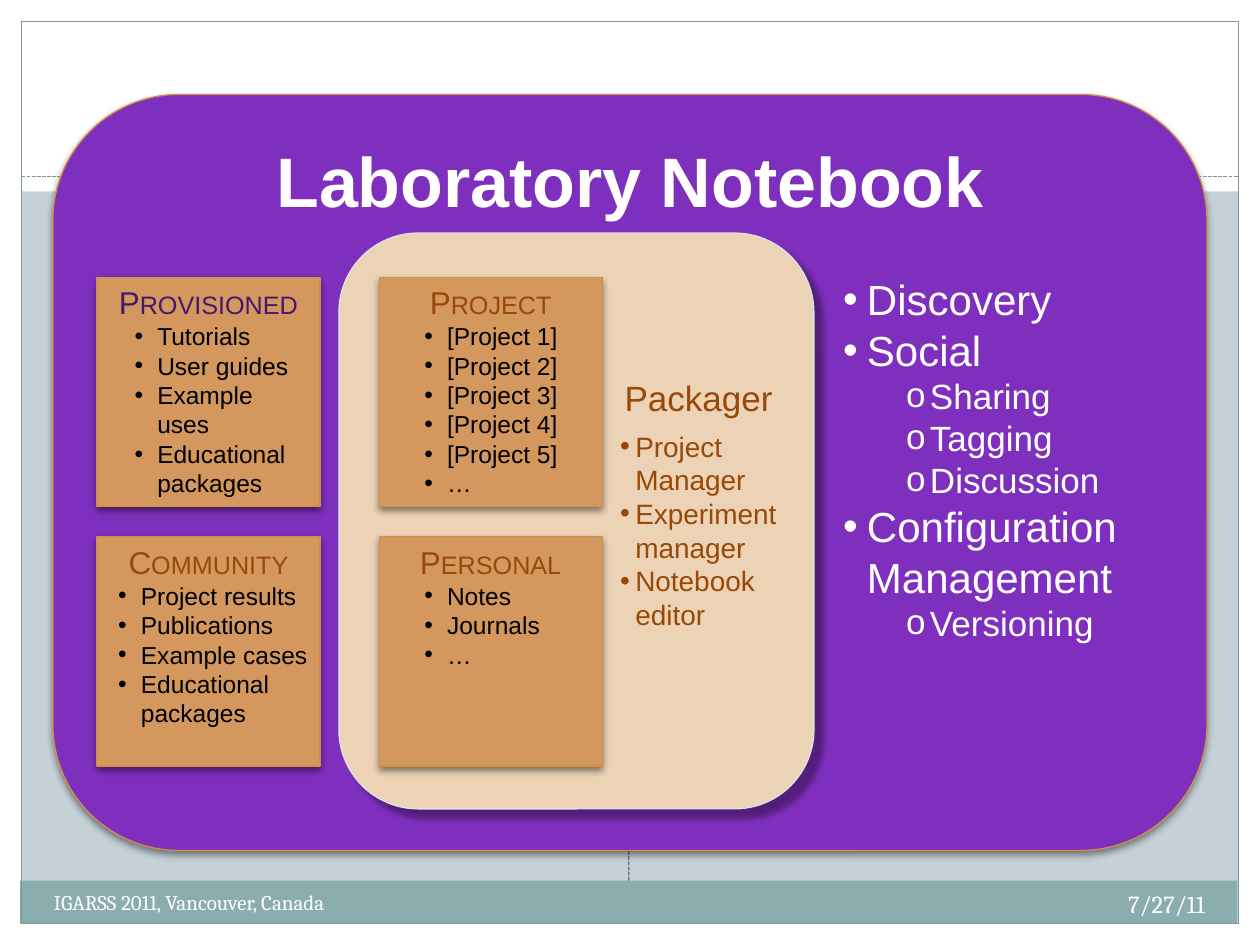
from dataclasses import dataclass

from lxml.etree import SubElement
from pptx import Presentation
from pptx.dml.color import RGBColor
from pptx.enum.dml import MSO_LINE
from pptx.enum.shapes import MSO_CONNECTOR, MSO_SHAPE
from pptx.enum.text import MSO_ANCHOR as Anchor, PP_ALIGN as Align
from pptx.oxml.ns import qn
from pptx.util import Pt

PX = 9144  # EMU per px, 100 px to the inch


@dataclass(frozen=True)
class Theme:
    sans: str = "Arial"
    serif: str = "Cambria"
    white: str = "FFFFFF"
    black: str = "000000"
    backdrop: str = "C5D1D7"
    footer: str = "8CADAE"
    frame: str = "7C999A"
    divider: str = "646B86"
    notebook: str = "7F2FBD"
    packager: str = "EDD3B6"
    packager_edge: str = "DFE1E7"
    card: str = "D4985F"
    edge: str = "D19049"
    brown: str = "984807"
    violet: str = "47186B"
    title: int = 40
    feature: int = 24
    subfeature: int = 20
    heading: int = 18
    tool: int = 16
    item: int = 14
    note: int = 12
    hairline: float = 0.75


@dataclass(frozen=True)
class Box:
    left: int
    top: int
    width: int
    height: int


@dataclass(frozen=True)
class Shadow:
    alpha: int
    blur: float
    distance: float
    angle: int


@dataclass(frozen=True)
class Line:
    text: str
    size: int
    color: str
    font: str = "Arial"
    align: Align = Align.LEFT
    bold: bool = False
    small_caps: bool = False
    indent: int = 0
    hang: int = 0
    bullet: str = ""
    after: int = 0


@dataclass(frozen=True)
class Card:
    column: int
    row: int
    heading: str
    color: str
    indent: int
    items: tuple[str, ...]


T = Theme()
CARD_SHADOW = Shadow(45, 4, 2, 90)
CARDS = (
    Card(0, 0, "Provisioned", T.violet, 38,
         ("Tutorials", "User guides", "Example uses", "Educational packages")),
    Card(0, 1, "Community", T.brown, 25,
         ("Project results", "Publications", "Example cases", "Educational packages")),
    Card(1, 0, "Project", T.brown, 44,
         (*(f"[Project {n}]" for n in range(1, 6)), "…")),
    Card(1, 1, "Personal", T.brown, 44, ("Notes", "Journals", "…")),
)
FEATURES = (
    ("Discovery", ()),
    ("Social", ("Sharing", "Tagging", "Discussion")),
    ("Configuration Management", ("Versioning",)),
)
TOOLS = ("Project Manager", "Experiment manager", "Notebook editor")


def rgb(color: str) -> RGBColor:
    return RGBColor.from_string(color)


def add_shadow(shape, shadow: Shadow) -> None:
    effects = shape.element.spPr.find(qn("a:effectLst"))
    outer = SubElement(effects, qn("a:outerShdw"), blurRad=str(Pt(shadow.blur)),
                       dist=str(Pt(shadow.distance)), dir=str(shadow.angle * 60000),
                       rotWithShape="0")
    tint = SubElement(outer, qn("a:srgbClr"), val=T.black)
    SubElement(tint, qn("a:alpha"), val=str(shadow.alpha * 1000))


def add_panel(slide, box: Box, fill: str = "", edge: str = "",
              kind=MSO_SHAPE.RECTANGLE, shadow: Shadow | None = None):
    panel = slide.shapes.add_shape(kind, box.left * PX, box.top * PX,
                                   box.width * PX, box.height * PX)
    panel.shadow.inherit = False
    if fill:
        panel.fill.solid()
        panel.fill.fore_color.rgb = rgb(fill)
    else:
        panel.fill.background()
    if edge:
        panel.line.color.rgb = rgb(edge)
        panel.line.width = Pt(T.hairline)
    else:
        panel.line.fill.background()
    if shadow:
        add_shadow(panel, shadow)
    return panel


def add_rule(slide, start: tuple[int, int], end: tuple[int, int], color: str):
    rule = slide.shapes.add_connector(MSO_CONNECTOR.STRAIGHT,
                                      *(v * PX for v in start + end))
    rule.line.color.rgb = rgb(color)
    rule.line.width = Pt(T.hairline)
    rule.line.dash_style = MSO_LINE.SQUARE_DOT
    SubElement(rule.element.spPr, qn("a:effectLst"))
    return rule


def write(shape, lines: list[Line], anchor=Anchor.TOP) -> None:
    frame = shape.text_frame
    frame.word_wrap = True
    frame.vertical_anchor = anchor
    for n, line in enumerate(lines):
        paragraph = frame.add_paragraph() if n else frame.paragraphs[0]
        paragraph.text = line.text
        paragraph.alignment = line.align
        paragraph.space_after = Pt(line.after)
        font = paragraph.font
        font.name, font.size, font.bold = line.font, Pt(line.size), line.bold
        font.color.rgb = rgb(line.color)
        properties = paragraph._p.get_or_add_pPr()
        properties.set("marL", str(line.indent * PX))
        properties.set("indent", str(-line.hang * PX))
        defaults = properties.find(qn("a:defRPr"))
        if line.small_caps:
            defaults.set("cap", "small")
        if line.bullet:
            face = SubElement(properties, qn("a:buFont"), typeface=T.sans)
            mark = SubElement(properties, qn("a:buChar"), char=line.bullet)
            defaults.addprevious(face)
            defaults.addprevious(mark)


def add_note(slide, box: Box, line: Line) -> None:
    note = slide.shapes.add_textbox(box.left * PX, box.top * PX,
                                    box.width * PX, box.height * PX)
    write(note, [line])


def add_card(slide, card: Card) -> None:
    box = Box(77 + card.column * 224, 220 + card.row * 206, 177, 182)
    panel = add_panel(slide, box, T.card, T.edge, shadow=CARD_SHADOW)
    heading = Line(card.heading, T.heading, card.color, align=Align.CENTER,
                   small_caps=True)
    write(panel, [heading] + [Line(item, T.item, T.black, indent=card.indent,
                                   hang=18, bullet="•") for item in card.items])


def main() -> None:
    deck = Presentation()
    deck.slide_width, deck.slide_height = 1000 * PX, 750 * PX
    slide = deck.slides.add_slide(deck.slide_layouts[6])
    slide.background.fill.solid()
    slide.background.fill.fore_color.rgb = rgb(T.backdrop)

    # White margins, footer band and frame
    for margin in (Box(0, 733, 1000, 17), Box(0, 0, 1000, 152),
                   Box(0, 0, 17, 750), Box(983, 0, 17, 750)):
        add_panel(slide, margin, T.white)
    footer = add_panel(slide, Box(16, 699, 966, 34), T.footer)
    add_panel(slide, Box(17, 17, 966, 716), edge=T.frame)
    add_rule(slide, (17, 140), (983, 140), T.frame)
    divider = add_rule(slide, (499, 699), (500, 172), T.divider)
    divider.begin_connect(footer, 0)

    # Date and event
    add_note(slide, Box(633, 701, 333, 40),
             Line("7/27/11", T.item, T.white, T.serif, Align.RIGHT))
    add_note(slide, Box(33, 701, 392, 40),
             Line("IGARSS 2011, Vancouver, Canada", T.note, T.white, T.serif))

    # Notebook with its features
    notebook = add_panel(slide, Box(42, 75, 916, 600), T.notebook, T.edge,
                         MSO_SHAPE.ROUNDED_RECTANGLE, CARD_SHADOW)
    lines = [Line("Laboratory Notebook", T.title, T.white, align=Align.CENTER,
                  bold=True, after=30)]
    for feature, parts in FEATURES:
        lines.append(Line(feature, T.feature, T.white, indent=607, hang=19, bullet="•"))
        lines += [Line(part, T.subfeature, T.white, indent=657, hang=19, bullet="o")
                  for part in parts]
    write(notebook, lines)

    # Packager with its tools
    packager = add_panel(slide, Box(269, 185, 377, 457), T.packager, T.packager_edge,
                         MSO_SHAPE.ROUNDED_RECTANGLE, Shadow(35, 3.1, 7, 45))
    packager.text_frame.margin_bottom = 32 * PX
    write(packager, [Line("Packager", T.subfeature, T.brown, align=Align.CENTER,
                          indent=194, after=6)]
          + [Line(tool, T.tool, T.brown, indent=207, hang=12, bullet="•")
             for tool in TOOLS], Anchor.MIDDLE)

    # Content cards
    for card in CARDS:
        add_card(slide, card)

    deck.save("out.pptx")


if __name__ == "__main__":
    main()
